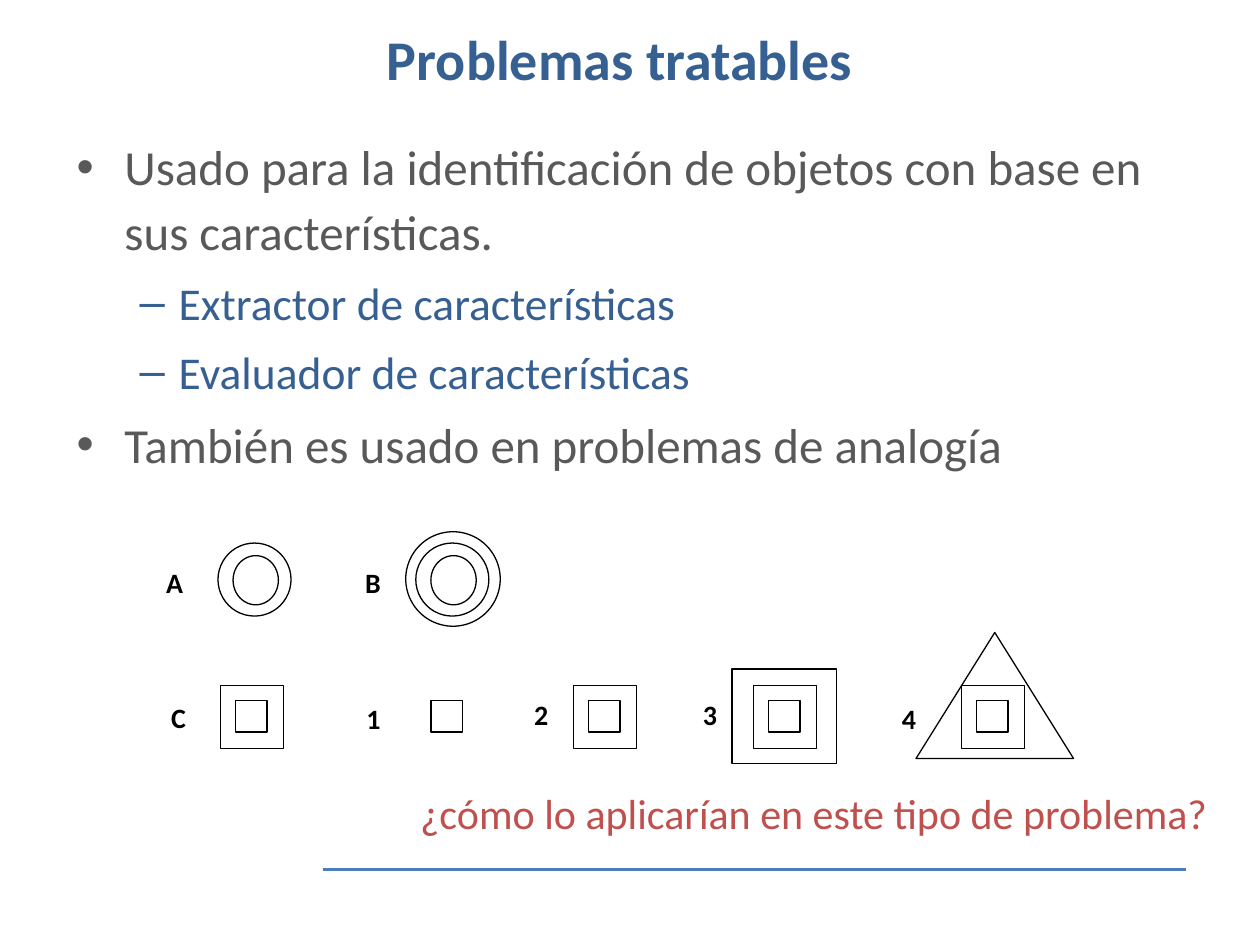
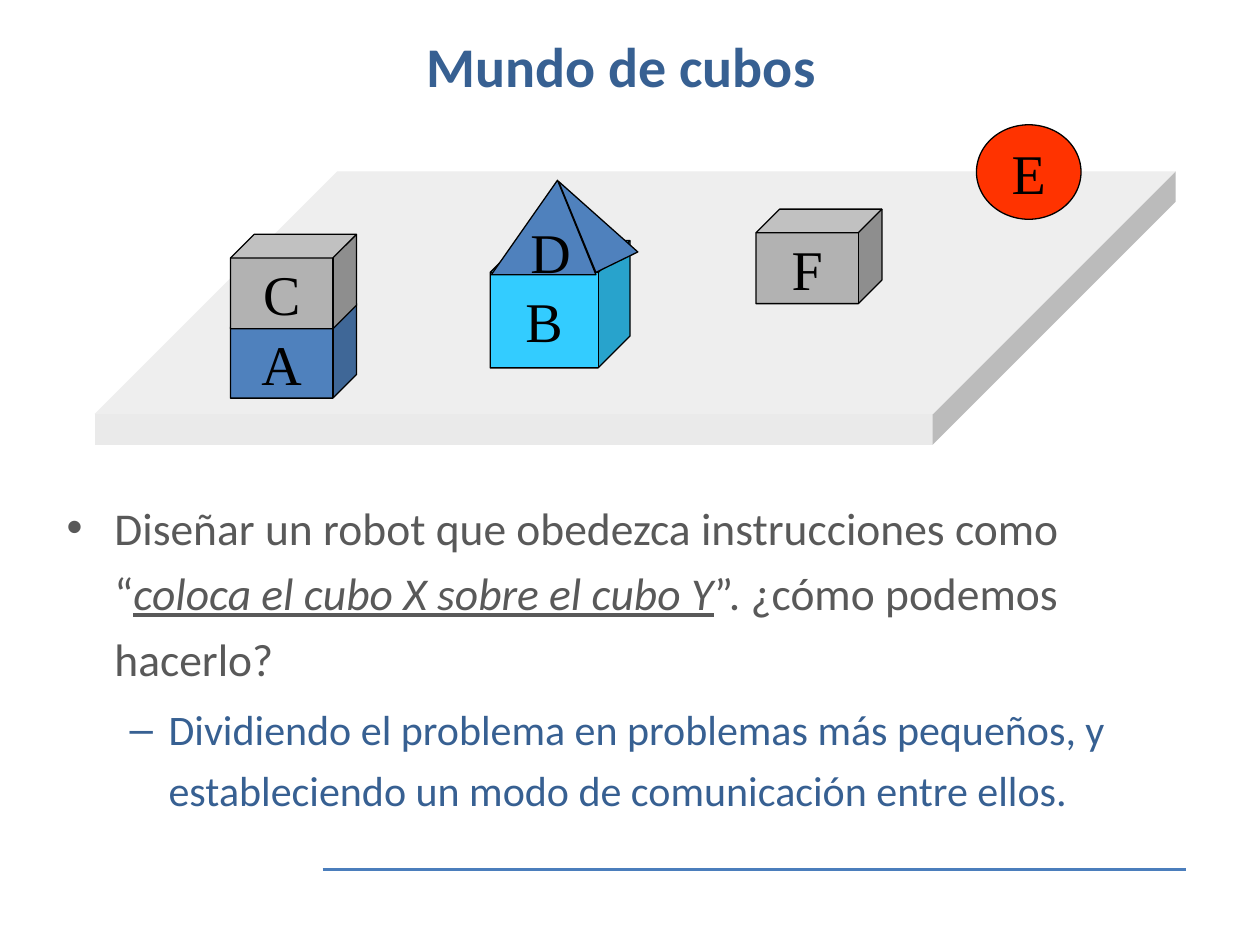
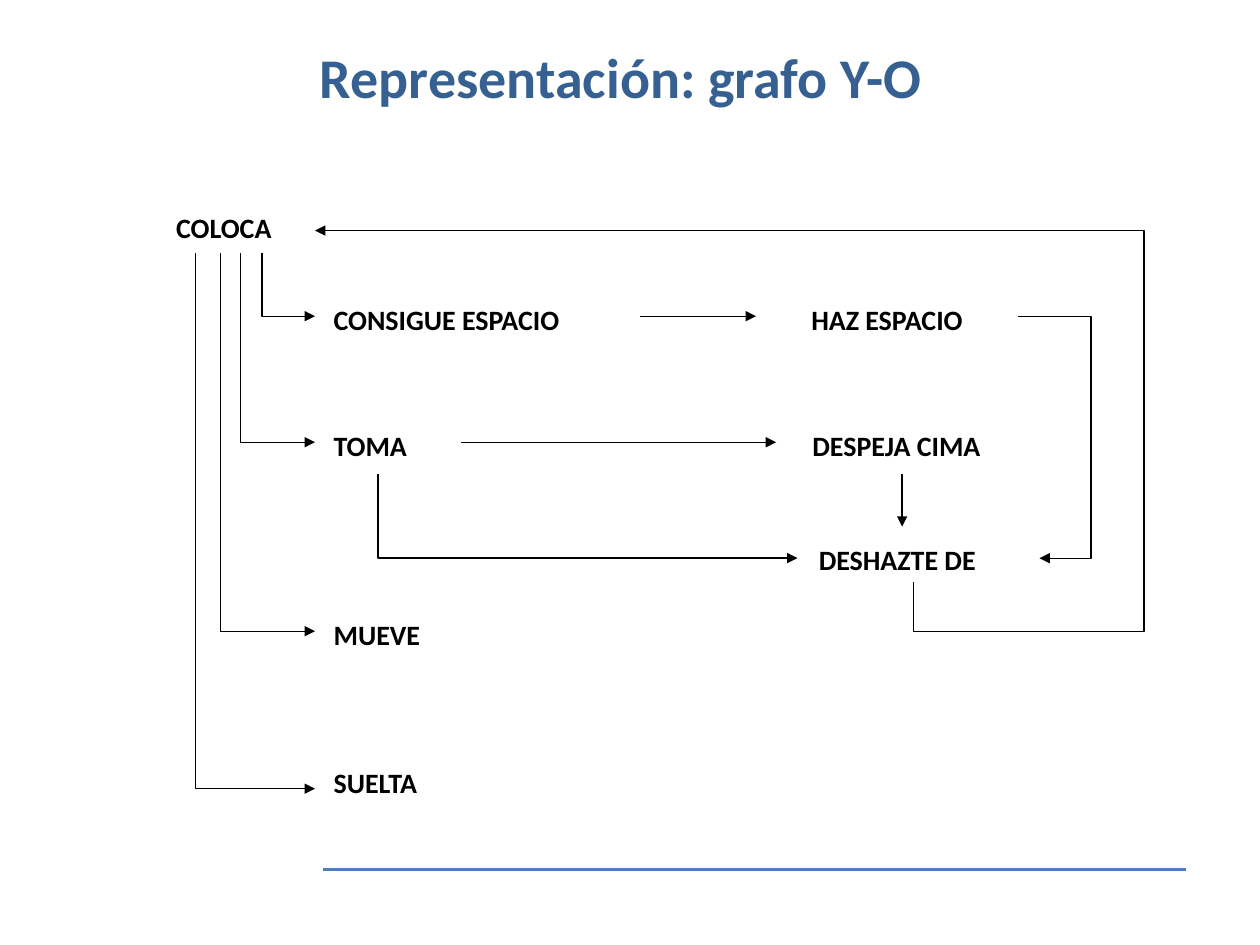
from lxml.etree import SubElement
from pptx import Presentation
from pptx.dml.color import RGBColor
from pptx.enum.shapes import MSO_CONNECTOR, MSO_SHAPE
from pptx.enum.text import MSO_ANCHOR, MSO_AUTO_SIZE, PP_ALIGN
from pptx.oxml.ns import qn
from pptx.util import Inches, Pt

BLACK = RGBColor(0x00, 0x00, 0x00)
NAVY = RGBColor(0x37, 0x60, 0x92)
BLUE = RGBColor(0x4F, 0x81, 0xBD)
RULE = RGBColor(0x4B, 0x7E, 0xBC)
GRAY = RGBColor(0x59, 0x59, 0x59)
RED = RGBColor(0xC0, 0x50, 0x4D)
STONE = RGBColor(0xB2, 0xB2, 0xB2)
TABLE = RGBColor(0xEA, 0xEA, 0xEA)
CYAN = RGBColor(0x33, 0xCC, 0xFF)
FLAME = RGBColor(0xFF, 0x33, 0x00)

HEAD = {"name": "Calibri", "size": Pt(32), "bold": True}
LABEL = {"name": "Calibri", "size": Pt(16), "bold": True}
LETTER = {"name": "Times New Roman", "size": Pt(32)}
PLAIN = {"name": "Calibri"}


def write(para, text, color, look):
    run = para.add_run()
    run.text = text
    run.font.color.rgb = color
    for key, value in look.items():
        setattr(run.font, key, value)


def draw(slide, kind, box, fill=None, edge=BLACK):
    """Add a preset shape with an optional fill and a thin edge."""
    shape = slide.shapes.add_shape(kind, *map(Inches, box))
    shape.shadow.inherit = False
    if fill is None:
        shape.fill.background()
    else:
        shape.fill.solid()
        shape.fill.fore_color.rgb = fill
    if edge is None:
        shape.line.fill.background()
    else:
        shape.line.color.rgb = edge
        shape.line.width = Pt(0.75)
    return shape


deck = Presentation()
deck.slide_width, deck.slide_height = Inches(10), Inches(7.5)
layout = deck.slide_layouts[5]

# Titles
slides = []
for text, box in [
    ("Problemas tratables", (0.67, 0, 8.5, 0.92)),
    ("Mundo de cubos", (0.43, 0.13, 9, 0.77)),
    ("Representación: grafo Y-O", (0.43, 0.22, 9, 0.77)),
]:
    slide = deck.slides.add_slide(layout)
    title = slide.shapes.title
    title.left, title.top, title.width, title.height = map(Inches, box)
    title.text_frame.vertical_anchor = MSO_ANCHOR.MIDDLE
    para = title.text_frame.paragraphs[0]
    para.alignment = PP_ALIGN.CENTER
    write(para, text, NAVY, HEAD)
    slides.append(slide)
shapes, cubes, graph = slides

# Footer rule, kept on the shared layout
rule = shapes.shapes.add_connector(
    MSO_CONNECTOR.STRAIGHT, Inches(2.56), Inches(6.9), Inches(9.41), Inches(6.9))
rule.line.color.rgb = RULE
rule.line.width = Pt(1.5)
SubElement(rule.element.spPr, qn("a:effectLst"))
layout.shapes.element.append(rule.element)

# Bullet text: box, line spacing, sizes by level, then (level, runs)
QUOTE = {"italic": True, "underline": True}
for slide, box, space, sizes, items in [
    (shapes, (0.51, 0.99, 9.17, 2.9), 1.1, (28, 26), [
        (0, [("Usado para la identificación de objetos con base en sus características.", {})]),
        (1, [("Extractor de características", {})]),
        (1, [("Evaluador de características", {})]),
        (0, [("También es usado en problemas de analogía", {})]),
    ]),
    (cubes, (0.43, 3.83, 9.21, 2.83), 1.2, (26, 24), [
        (0, [("Diseñar un robot que obedezca instrucciones como “", {}),
             ("coloca el cubo X sobre el cubo Y", QUOTE),
             ("”. ¿cómo podemos hacerlo?", {})]),
        (1, [("Dividiendo el problema en problemas más pequeños, y "
              "estableciendo un modo de comunicación entre ellos.", {})]),
    ]),
]:
    frame = slide.shapes.add_textbox(*map(Inches, box)).text_frame
    frame.word_wrap = True
    for i, (level, runs) in enumerate(items):
        para = frame.add_paragraph() if i else frame.paragraphs[0]
        size = sizes[level]
        para.level = level
        para.line_spacing = space
        para.space_before = Pt(size * 0.2)
        props = para._p.get_or_add_pPr()
        props.set("marL", str(Inches((0.38, 0.81)[level])))
        props.set("indent", str(Inches((-0.38, -0.31)[level])))
        SubElement(props, qn("a:buFont"), typeface="Arial")
        SubElement(props, qn("a:buChar"), char="•–"[level])
        for text, look in runs:
            write(para, text, (GRAY, NAVY)[level], PLAIN | {"size": Pt(size)} | look)

# Slide 1: analogy figures
frame = shapes.shapes.add_textbox(*map(Inches, (0.51, 6.16, 9.17, 0.55))).text_frame
frame.word_wrap = True
para = frame.paragraphs[0]
para.alignment = PP_ALIGN.RIGHT
para.line_spacing = 1.1
write(para, "¿cómo lo aplicarían en este tipo de problema?", RED, PLAIN | {"size": Pt(24)})

draw(shapes, MSO_SHAPE.OVAL, (3.22, 4.22, 0.75, 0.75))
for left in (1.73, 3.3):
    draw(shapes, MSO_SHAPE.OVAL, (left, 4.31, 0.58, 0.58))
    draw(shapes, MSO_SHAPE.OVAL, (left + 0.12, 4.41, 0.36, 0.39))
for left in (1.87, 3.42, 4.67, 6.1, 7.75):
    draw(shapes, MSO_SHAPE.RECTANGLE, (left, 5.56, 0.25, 0.25))
    if left != 3.42:
        draw(shapes, MSO_SHAPE.RECTANGLE, (left - 0.12, 5.44, 0.5, 0.5))
draw(shapes, MSO_SHAPE.RECTANGLE, (5.81, 5.31, 0.83, 0.75))
draw(shapes, MSO_SHAPE.ISOSCELES_TRIANGLE, (7.27, 5.02, 1.25, 1))

# Slide 2: blocks on a table
CUBE, PEAK = MSO_SHAPE.CUBE, MSO_SHAPE.ISOSCELES_TRIANGLE
for text, kind, box, adjust, fill, edge, turn in [
    ("", CUBE, (0.75, 1.36, 8.58, 2.17), 0.888, TABLE, None, 0),
    ("A", CUBE, (1.83, 2.41, 1, 0.75), 0.25, BLUE, BLACK, 0),
    ("C", CUBE, (1.83, 1.86, 1, 0.75), 0.25, STONE, BLACK, 0),
    ("B", CUBE, (3.89, 1.91, 1.11, 1.01), 0.25, CYAN, BLACK, 0),
    ("D", PEAK, (3.9, 1.43, 0.83, 0.75), 0.633, BLUE, BLACK, 0),
    ("", PEAK, (4.54, 1.34, 0.37, 0.78), 0.135, BLUE, BLACK, 334),
    ("F", CUBE, (6, 1.66, 1, 0.75), 0.25, STONE, BLACK, 0),
    ("E", MSO_SHAPE.OVAL, (7.75, 0.99, 0.83, 0.75), None, FLAME, BLACK, 0),
]:
    block = draw(cubes, kind, box, fill, edge)
    block.rotation = turn
    if adjust is not None:
        block.adjustments[0] = adjust
    if text:
        frame = block.text_frame
        frame.word_wrap = False
        frame.vertical_anchor = MSO_ANCHOR.MIDDLE
        frame.paragraphs[0].alignment = PP_ALIGN.CENTER
        write(frame.paragraphs[0], text, BLACK, LETTER)

# Slide 3: arrows of the graph
branches = [
    [(left, 2.01), (left, end), (2.5, end)]
    for left, end in [(2.08, 2.51), (1.91, 3.51), (1.75, 5.01), (1.55, 6.26)]
]
for route in branches + [
    [(5.08, 2.51), (6, 2.51)],
    [(3.66, 3.51), (6.16, 3.51)],
    [(7.16, 3.76), (7.16, 4.18)],
    [(3, 3.76), (3, 4.43), (6.33, 4.43)],
    [(8.08, 2.51), (8.66, 2.51), (8.66, 4.43), (8.25, 4.43)],
    [(7.25, 4.62), (7.25, 5.01), (9.08, 5.01), (9.08, 1.83), (2.5, 1.83)],
]:
    start, *rest = [(Inches(x), Inches(y)) for x, y in route]
    if len(rest) == 1:
        arrow = graph.shapes.add_connector(MSO_CONNECTOR.STRAIGHT, *start, *rest[0])
    else:
        path = graph.shapes.build_freeform(*start)
        path.add_line_segments(rest, close=False)
        arrow = path.convert_to_shape()
        arrow.fill.background()
    arrow.line.color.rgb = BLACK
    arrow.line.width = Pt(0.75)
    props = arrow.element.spPr
    SubElement(props.find(qn("a:ln")), qn("a:tailEnd"), type="triangle")
    SubElement(props, qn("a:effectLst"))

# Labels of the figures and of the graph
for slide, labels in [
    (shapes, [
        ("A", 1.22, 4.44, 0.36), ("B", 2.8, 4.44, 0.36), ("C", 1.26, 5.51, 0.36),
        ("1", 2.81, 5.52, 0.32), ("2", 4.14, 5.49, 0.32),
        ("3", 5.48, 5.49, 0.32), ("4", 7.06, 5.52, 0.32),
    ]),
    (graph, [
        ("COLOCA", 1.3, 1.62, 1.16), ("CONSIGUE ESPACIO", 2.55, 2.35, 2.45),
        ("TOMA", 2.55, 3.35, 0.86), ("MUEVE", 2.55, 4.85, 0.99),
        ("SUELTA", 2.55, 6.03, 1.09), ("HAZ ESPACIO", 6.34, 2.35, 1.72),
        ("DESPEJA CIMA", 6.35, 3.35, 1.86), ("DESHAZTE DE", 6.4, 4.26, 1.76),
    ]),
]:
    for text, left, top, width in labels:
        frame = slide.shapes.add_textbox(*map(Inches, (left, top, width, 0.37))).text_frame
        frame.word_wrap = False
        frame.auto_size = MSO_AUTO_SIZE.SHAPE_TO_FIT_TEXT
        write(frame.paragraphs[0], text, BLACK, LABEL)

deck.save("out.pptx")
